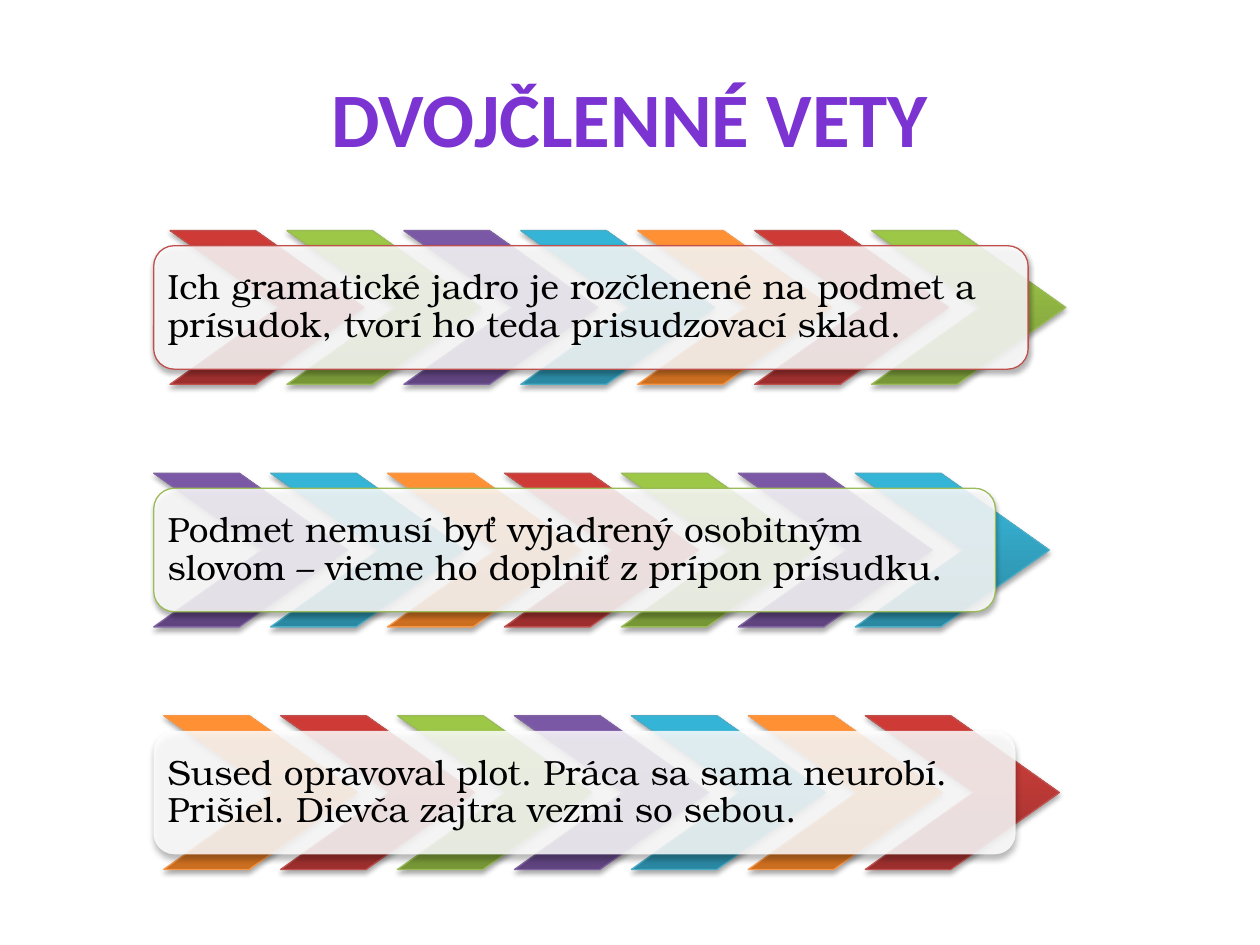
import pptx
import pptx.dml.color
import pptx.enum.shapes
import pptx.enum.text
import pptx.oxml
import pptx.oxml.ns
import pptx.util
from pptx.util import Inches

SHAPES = pptx.enum.shapes.MSO_SHAPE
ALIGN = pptx.enum.text.PP_ALIGN
NAMESPACE = pptx.oxml.ns.nsdecls("a")

# Each colour: dark, middle and light gradient stop, then the line
PALETTE = [
    ("9C2F2D", "CB3E3A", "CE3B37", "C0504D"),
    ("779737", "9BC348", "9DC746", "9BBB59"),
    ("5F4480", "7B58A6", "7C57A8", "8064A2"),
    ("2A88A2", "37B1D2", "34B4D6", "4BACC6"),
    ("CC6E20", "FF9034", "FF9136", "F79646"),
]

# Each row: left of the first chevron, panel width, panel line, text
ROWS = [
    (1.35, 6.94, "C0504D", "Ich gramatické jadro je rozčlenené na podmet a "
     "prísudok, tvorí ho teda prisudzovací sklad."),
    (1.22, 6.68, "9BBB59", "Podmet nemusí byť vyjadrený osobitným slovom – "
     "vieme ho doplniť z prípon prísudku."),
    (1.3, 6.84, None, "Sused opravoval plot. Práca sa sama neurobí. "
     "Prišiel. Dievča zajtra vezmi so sebou."),
]
ROW_TOP, ROW_STEP = 1.83, 1.925
CHEVRON_COUNT, CHEVRON_STEP = 7, 0.928
CHEVRON_WIDTH, CHEVRON_HEIGHT = 1.54, 1.22
PANEL_LEFT, PANEL_DROP, PANEL_HEIGHT = 1.22, 0.12, 0.98
TEXT_INSET = 0.05


def color(value):
    return pptx.dml.color.RGBColor.from_string(value)


def apply_format(target, values):
    for name, value in values.items():
        setattr(target, name, value)


def gradient(stops, angle):
    """Return a linear gradient fill element."""
    stop_xml = "".join(
        f'<a:gs pos="{position * 1000}"><a:srgbClr val="{value}"/></a:gs>'
        for position, value in stops)
    return pptx.oxml.parse_xml(
        f'<a:gradFill {NAMESPACE} rotWithShape="1"><a:gsLst>{stop_xml}</a:gsLst>'
        f'<a:lin ang="{angle * 60000}" scaled="0"/></a:gradFill>')


def set_line(shape, value):
    if value is None:
        shape.line.fill.background()
        return
    shape.line.color.rgb = color(value)
    shape.line.width = pptx.util.Pt(0.75)


def add_shadow(shape, blur=3.1, distance=1.8, opacity=35):
    shape.shadow.inherit = False
    effects = shape._element.spPr.find(pptx.oxml.ns.qn("a:effectLst"))
    effects.append(pptx.oxml.parse_xml(
        f'<a:outerShdw {NAMESPACE} blurRad="{pptx.util.Pt(blur)}" '
        f'dist="{pptx.util.Pt(distance)}" dir="5400000" rotWithShape="0">'
        f'<a:srgbClr val="000000"><a:alpha val="{opacity * 1000}"/></a:srgbClr>'
        '</a:outerShdw>'))


def add_text(slide, box, text, font_format, paragraph_format, inset=None):
    shape = slide.shapes.add_textbox(*map(Inches, box))
    frame = shape.text_frame
    apply_format(frame, {"word_wrap": True,
                         "vertical_anchor": pptx.enum.text.MSO_ANCHOR.MIDDLE})
    if inset is not None:
        apply_format(frame, {f"margin_{side}": Inches(inset)
                             for side in ("left", "top", "right", "bottom")})
    paragraph = frame.paragraphs[0]
    apply_format(paragraph, paragraph_format)
    run = paragraph.add_run()
    run.text = text
    apply_format(run.font, font_format)
    return run


def add_title(slide):
    run = add_text(slide, (0.5, 0.3, 9, 1.25), "DVOJČLENNÉ VETY",
                   {"name": "Calibri", "size": pptx.util.Pt(44), "bold": True},
                   {"alignment": ALIGN.CENTER})
    # Outline and gradient stand before the typeface
    properties = run._r.get_or_add_rPr()
    properties.insert(0, pptx.oxml.parse_xml(
        f'<a:ln {NAMESPACE} w="{pptx.util.Pt(0.71)}"><a:solidFill>'
        '<a:srgbClr val="5E457C"/></a:solidFill></a:ln>'))
    properties.insert(1, gradient([(0, "3D1B67"), (43, "7B34D2"),
                                   (48, "7330C4"), (100, "3D1B67")], 90))


def add_chevron(slide, left, top, colors):
    dark, middle, light, line = colors
    shape = slide.shapes.add_shape(
        SHAPES.CHEVRON, Inches(left), Inches(top),
        Inches(CHEVRON_WIDTH), Inches(CHEVRON_HEIGHT))
    shape.adjustments[0] = 0.706
    geometry = shape._element.spPr.find(pptx.oxml.ns.qn("a:prstGeom"))
    geometry.addnext(gradient([(0, dark), (80, middle), (100, light)], 270))
    set_line(shape, line)
    add_shadow(shape)


def add_panel(slide, top, width, line):
    shape = slide.shapes.add_shape(
        SHAPES.ROUNDED_RECTANGLE, Inches(PANEL_LEFT), Inches(top),
        Inches(width), Inches(PANEL_HEIGHT))
    shape.fill.solid()
    shape.fill.fore_color.rgb = color("FFFFFF")
    fill_color = shape._element.spPr.find(".//" + pptx.oxml.ns.qn("a:srgbClr"))
    fill_color.append(pptx.oxml.parse_xml(f'<a:alpha {NAMESPACE} val="85000"/>'))
    set_line(shape, line)
    if line:
        add_shadow(shape)
    else:
        add_shadow(shape, blur=3.5, distance=2.2, opacity=32)


def add_row(slide, row_index, chevron_left, panel_width, line, text):
    top = ROW_TOP + row_index * ROW_STEP
    # The colours run on from one row to the next
    for column in range(CHEVRON_COUNT):
        color_index = (row_index * CHEVRON_COUNT + column) % len(PALETTE)
        add_chevron(slide, chevron_left + column * CHEVRON_STEP, top,
                    PALETTE[color_index])
    panel_top = top + PANEL_DROP
    add_panel(slide, panel_top, panel_width, line)
    box = (PANEL_LEFT + TEXT_INSET, panel_top + TEXT_INSET,
           panel_width - 2 * TEXT_INSET, PANEL_HEIGHT - 2 * TEXT_INSET)
    run = add_text(slide, box, text,
                   {"name": "TeX Gyre Bonum", "size": pptx.util.Pt(20)},
                   {"alignment": ALIGN.LEFT, "line_spacing": 0.9,
                    "space_after": pptx.util.Pt(7)}, inset=0.06)
    run.font.color.rgb = color("000000")


def main():
    presentation = pptx.Presentation()
    apply_format(presentation, {"slide_width": Inches(10),
                                "slide_height": Inches(7.5)})
    slide = presentation.slides.add_slide(presentation.slide_layouts[6])
    add_title(slide)
    for row_index, row in enumerate(ROWS):
        add_row(slide, row_index, *row)
    presentation.save("out.pptx")


if __name__ == "__main__":
    main()
